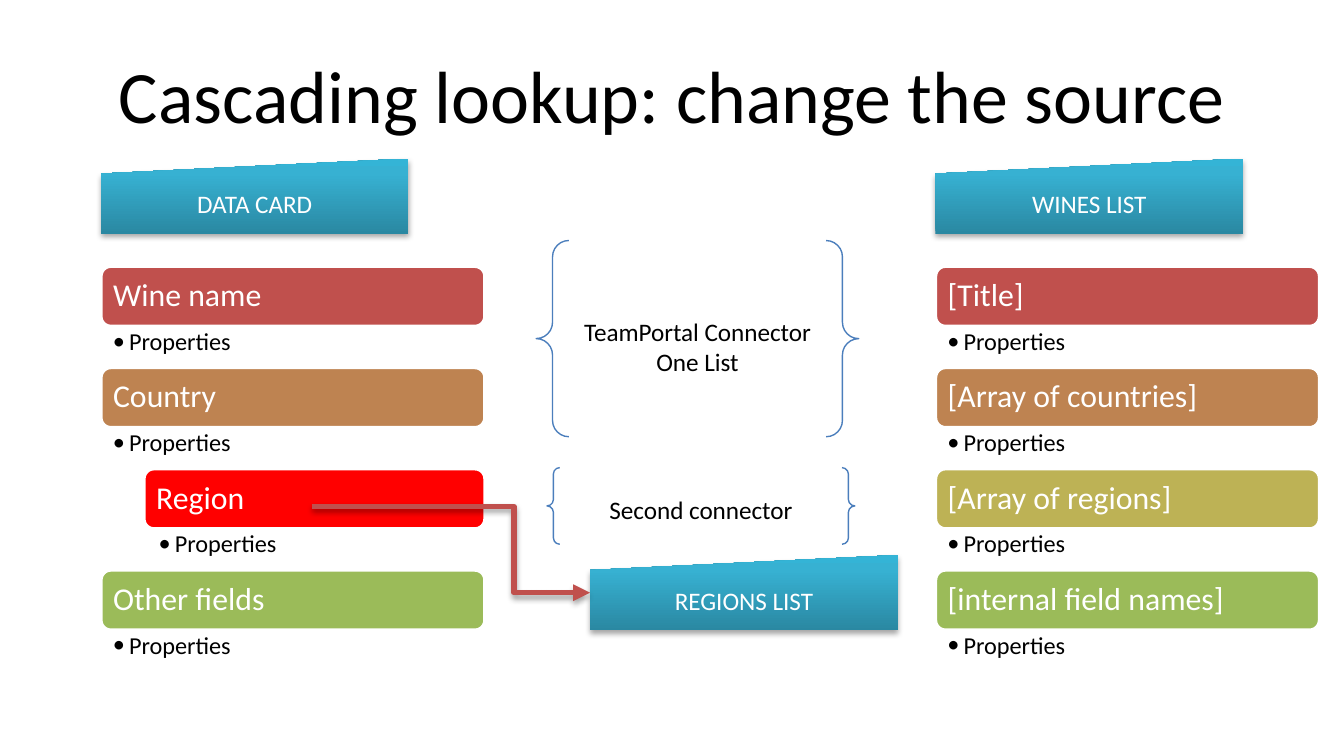
"""Build the cascading lookup slide: two field lists, their connectors and the regions list."""
from copy import deepcopy

from lxml.etree import SubElement
from pptx import Presentation
from pptx.dml.color import RGBColor
from pptx.enum.shapes import MSO_CONNECTOR as Connector, MSO_SHAPE as Preset
from pptx.enum.text import MSO_ANCHOR as Anchor, MSO_AUTO_SIZE as AutoSize, PP_ALIGN as Align
from pptx.oxml.ns import qn
from pptx.util import Inches, Pt

rgb = RGBColor.from_string

DATA_COLUMN, WINES_COLUMN, COLUMN_WIDTH = 0.75, 6.96, 2.86
FIRST_ROW, ROW_PITCH = 1.98, 2.26 / 3
BAR_HEIGHT, PROPERTY_HEIGHT, INDENT = 0.45, 0.31, 0.32
BANNER_WIDTH, BANNER_HEIGHT, BANNER_TOP = 2.29, 0.56, 1.18
REGIONS_LEFT, REGIONS_TOP = 4.39, 4.13


def write(shape, text, size, color, align=Align.CENTER, anchor=Anchor.MIDDLE, insets=(0.1, 0.05, 0.1, 0.05)):
    frame = shape.text_frame
    frame.text = text
    frame.word_wrap, frame.auto_size, frame.vertical_anchor = True, AutoSize.NONE, anchor
    frame.margin_left, frame.margin_top, frame.margin_right, frame.margin_bottom = map(Inches, insets)
    for paragraph in frame.paragraphs:
        paragraph.alignment = align
        paragraph.font.name, paragraph.font.size = "Calibri", Pt(size)
        paragraph.font.color.rgb = rgb(color)
    return frame.paragraphs[0]


def add_shadow(effects):
    shadow = SubElement(effects, qn("a:outerShdw"), blurRad=str(Pt(3.1)), dist=str(Pt(1.8)),
                        dir="5400000", rotWithShape="0")
    black = SubElement(shadow, qn("a:srgbClr"), val="000000")
    SubElement(black, qn("a:alpha"), val="35000")


presentation = Presentation()
presentation.slide_width = Inches(10)
presentation.slide_height = presentation.slide_width * 9 // 16
slide = presentation.slides.add_slide(presentation.slide_layouts[5])
shapes = slide.shapes

title = shapes.title
title.left, title.top, title.width, title.height = map(Inches, (0.5, 0.23, 9, 0.94))
write(title, "Cascading lookup: change the source", 39.6, "000000")

field_lists = [
    (DATA_COLUMN, [("Wine name", "C0504D", 0), ("Country", "BE8351", 0),
                   ("Region", "FF0000", INDENT), ("Other fields", "9BBB59", 0)]),
    (WINES_COLUMN, [("[Title]", "C0504D", 0), ("[Array of countries]", "BE8351", 0),
                    ("[Array of regions]", "BDB255", 0), ("[internal field names]", "9BBB59", 0)]),
]
for column, fields in field_lists:
    for row, (name, color, indent) in enumerate(fields):
        left, width = column + indent, COLUMN_WIDTH - indent
        top = FIRST_ROW + row * ROW_PITCH
        bar = shapes.add_shape(Preset.ROUNDED_RECTANGLE, *map(Inches, (left, top, width, BAR_HEIGHT)))
        bar.shadow.inherit = False
        bar.fill.solid()
        bar.fill.fore_color.rgb = rgb(color)
        bar.line.color.rgb = rgb("FFFFFF")
        bar.line.width = Pt(2)
        write(bar, name, 17, "FFFFFF", Align.LEFT, insets=(0.07, 0.07, 0.07, 0.07)).line_spacing = 0.9

        property_left, property_width = (left + 0.02, 2.18) if indent else (left, width)
        box = shapes.add_textbox(*map(Inches, (property_left, top + BAR_HEIGHT, property_width, PROPERTY_HEIGHT)))
        paragraph = write(box, "Properties", 13, "000000", Align.LEFT, Anchor.TOP, (0.09, 0.02, 0.13, 0.02))
        paragraph.line_spacing = 0.9
        properties = paragraph._p.get_or_add_pPr()
        properties.set("marL", str(Inches(0.12)))
        properties.set("indent", str(-Inches(0.12)))
        defaults = properties.find(qn("a:defRPr"))
        for tag, attributes in (("a:buFont", {"typeface": "Calibri"}), ("a:buChar", {"char": "•"})):
            defaults.addprevious(properties.makeelement(qn(tag), attributes))
        paragraph.runs[0].font.size = Pt(13)

braces = [
    ("TeamPortal Connector\nOne List", 3.99, 1.79, 2.4, 1.46),
    ("Second connector", 4.07, 3.48, 2.29, 0.57),
]
for text, *bounds in braces:
    brace = shapes.add_shape(Preset.DOUBLE_BRACE, *map(Inches, bounds))
    brace.shadow.inherit = False
    brace.fill.background()
    brace.line.color.rgb = rgb("4B7EBC")
    brace.line.width = Pt(0.75)
    write(brace, text, 13.5, "000000")

banners = [
    ("DATA CARD", DATA_COLUMN, BANNER_TOP),
    ("WINES LIST", WINES_COLUMN, BANNER_TOP),
    ("REGIONS LIST", REGIONS_LEFT, REGIONS_TOP),
]
for text, left, top in banners:
    banner = shapes.add_shape(Preset.FLOWCHART_MANUAL_INPUT,
                              *map(Inches, (left, top, BANNER_WIDTH, BANNER_HEIGHT)))
    banner.line.fill.background()
    banner.fill.gradient()
    banner.fill.gradient_angle = 90
    stops = banner._element.spPr.find(".//" + qn("a:gsLst"))
    stops.append(deepcopy(stops[-1]))
    for stop, (position, color) in zip(banner.fill.gradient_stops,
                                       [(0, "2A88A2"), (0.8, "37B1D2"), (1, "34B4D6")]):
        stop.position = position
        stop.color.rgb = rgb(color)
    banner.shadow.inherit = False
    add_shadow(banner._element.spPr.find(qn("a:effectLst")))
    write(banner, text, 13.5, "FFFFFF")

arrow = shapes.add_connector(Connector.ELBOW, *map(Inches, (2.32, 3.77, REGIONS_LEFT, REGIONS_TOP + BANNER_HEIGHT / 2)))
arrow.line.color.rgb = rgb("C0504D")
arrow.line.width = Pt(3)
SubElement(arrow.line._get_or_add_ln(), qn("a:tailEnd"), type="triangle")
arrow_properties = arrow._element.spPr
adjustments = arrow_properties.find(".//" + qn("a:avLst"))
SubElement(adjustments, qn("a:gd"), name="adj1", fmla="val 72700")
add_shadow(SubElement(arrow_properties, qn("a:effectLst")))

presentation.save("out.pptx")
